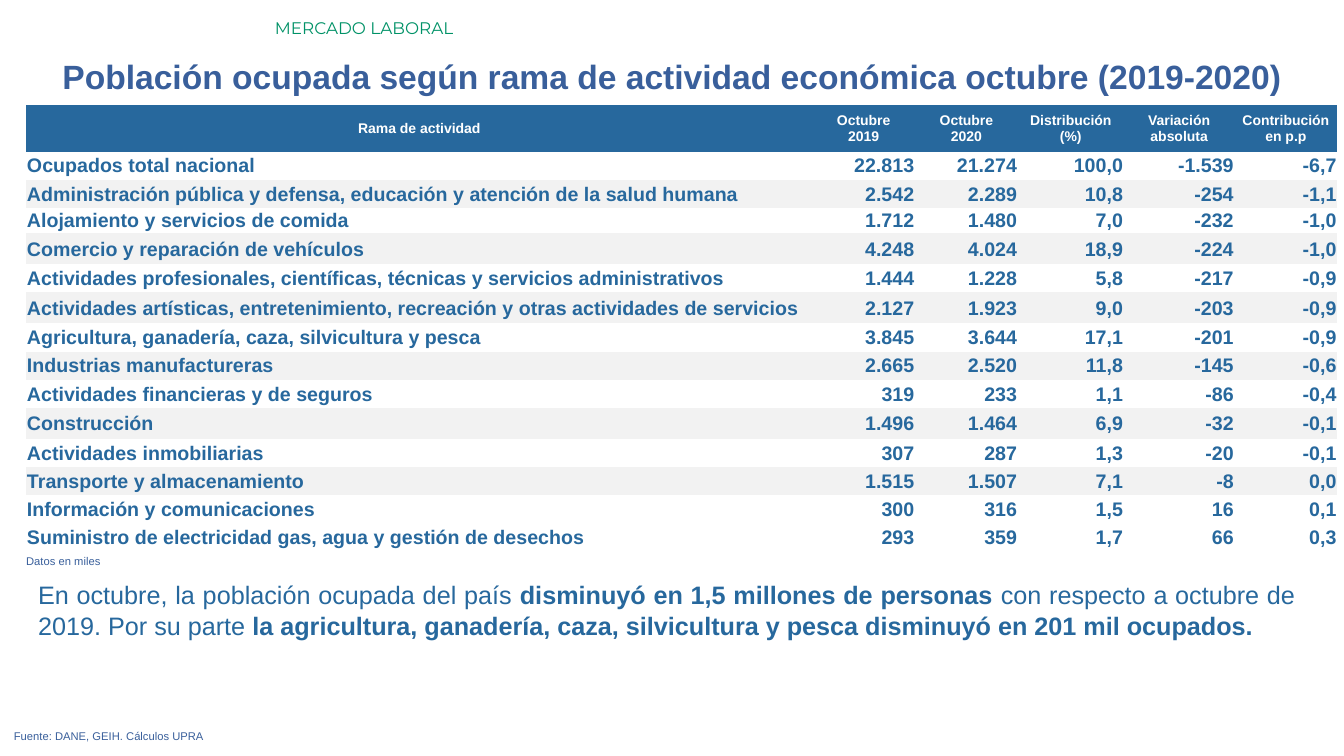
from dataclasses import dataclass

from pptx import Presentation
from pptx.dml.color import RGBColor
from pptx.enum import text as txt
from pptx.util import Cm, Pt

ALIGN = txt.PP_ALIGN
NO_GRID_STYLE = "{2D5ABB26-0587-4C30-8999-92F81FD0307C}"


@dataclass(frozen=True)
class Theme:
    green: str = "009267"
    title_blue: str = "395F9B"
    blue: str = "27689D"
    white: str = "FFFFFF"
    band: str = "F2F2F2"
    body_font: str = "Arial"
    section_font: str = "Montserrat"
    title_size: int = 24
    summary_size: int = 18
    row_size: int = 14
    section_size: int = 12
    header_size: int = 10
    note_size: int = 8


@dataclass(frozen=True)
class Box:
    """Position and size in centimetres."""
    left: float
    top: float
    width: float
    height: float


@dataclass(frozen=True)
class Column:
    heading: str
    width: float


@dataclass(frozen=True)
class Branch:
    name: str
    figures: str
    height: float = 0.71


THEME = Theme()
HEADER_HEIGHT = 1.18
COLUMNS = (
    Column("Rama de actividad", 19.81),
    Column("Octubre\n2019", 2.59),
    Column("Octubre\n2020", 2.59),
    Column("Distribución\n(%)", 2.67),
    Column("Variación\nabsoluta", 2.79),
    Column("Contribución\nen p.p", 2.59),
)
BRANCHES = (
    Branch("Ocupados total nacional", "22.813 21.274 100,0 -1.539 -6,7"),
    Branch("Administración pública y defensa, educación y atención de la salud humana",
           "2.542 2.289 10,8 -254 -1,1"),
    Branch("Alojamiento y servicios de comida", "1.712 1.480 7,0 -232 -1,0", 0.64),
    Branch("Comercio y reparación de vehículos", "4.248 4.024 18,9 -224 -1,0", 0.78),
    Branch("Actividades profesionales, científicas, técnicas y servicios administrativos",
           "1.444 1.228 5,8 -217 -0,9"),
    Branch("Actividades artísticas, entretenimiento, recreación y otras actividades de servicios",
           "2.127 1.923 9,0 -203 -0,9", 0.78),
    Branch("Agricultura, ganadería, caza, silvicultura y pesca", "3.845 3.644 17,1 -201 -0,9"),
    Branch("Industrias manufactureras", "2.665 2.520 11,8 -145 -0,6"),
    Branch("Actividades financieras y de seguros", "319 233 1,1 -86 -0,4"),
    Branch("Construcción", "1.496 1.464 6,9 -32 -0,1", 0.78),
    Branch("Actividades inmobiliarias", "307 287 1,3 -20 -0,1"),
    Branch("Transporte y almacenamiento", "1.515 1.507 7,1 -8 0,0"),
    Branch("Información y comunicaciones", "300 316 1,5 16 0,1"),
    Branch("Suministro de electricidad gas, agua y gestión de desechos", "293 359 1,7 66 0,3"),
)
SUMMARY = (
    "En octubre, la población ocupada del país **disminuyó en 1,5 millones de personas **"
    "con respecto a octubre de 2019. Por su parte **la agricultura, ganadería, caza, "
    "silvicultura y pesca disminuyó en 201 mil ocupados.**"
)


def write(frame, text: str, *, size: int, color: str, font: str = THEME.body_font,
          bold: bool = False, align: ALIGN = ALIGN.LEFT) -> None:
    """Fill a frame: a newline starts a paragraph, double asterisks switch bold."""
    for number, line in enumerate(text.split("\n")):
        paragraph = frame.add_paragraph() if number else frame.paragraphs[0]
        paragraph.alignment = align
        for position, part in enumerate(line.split("**")):
            if not part:
                continue
            run = paragraph.add_run()
            run.text = part
            run.font.name = font
            run.font.size = Pt(size)
            run.font.bold = bold != (position % 2 == 1)
            run.font.color.rgb = RGBColor.from_string(color)


def add_text(slide, box: Box, text: str, **text_format) -> None:
    area = slide.shapes.add_textbox(Cm(box.left), Cm(box.top), Cm(box.width), Cm(box.height))
    area.text_frame.word_wrap = True
    area.text_frame.auto_size = txt.MSO_AUTO_SIZE.SHAPE_TO_FIT_TEXT
    write(area.text_frame, text, **text_format)


def set_title(slide, box: Box, text: str) -> None:
    title = slide.shapes.title
    title.left, title.top = Cm(box.left), Cm(box.top)
    title.width, title.height = Cm(box.width), Cm(box.height)
    title.text_frame.word_wrap = True
    title.text_frame.auto_size = txt.MSO_AUTO_SIZE.SHAPE_TO_FIT_TEXT
    title.text_frame.vertical_anchor = txt.MSO_ANCHOR.TOP
    write(title.text_frame, text, size=THEME.title_size, color=THEME.title_blue,
          bold=True, align=ALIGN.CENTER)


def fill_cell(cell, text: str, fill: str | None, **text_format) -> None:
    cell.margin_left = cell.margin_right = cell.margin_top = Cm(0.02)
    cell.margin_bottom = 0
    cell.vertical_anchor = txt.MSO_ANCHOR.MIDDLE
    if fill:
        cell.fill.solid()
        cell.fill.fore_color.rgb = RGBColor.from_string(fill)
    else:
        cell.fill.background()
    write(cell.text_frame, text, bold=True, **text_format)


def add_branch_table(slide, left: float, top: float) -> None:
    heights = [HEADER_HEIGHT] + [branch.height for branch in BRANCHES]
    width = sum(column.width for column in COLUMNS)
    frame = slide.shapes.add_table(len(heights), len(COLUMNS), Cm(left), Cm(top),
                                   Cm(width), Cm(sum(heights)))
    table = frame.table
    table.first_row = table.horz_banding = False
    table._tbl.tblPr[0].text = NO_GRID_STYLE

    for row, height in zip(table.rows, heights):
        row.height = Cm(height)
    for index, column in enumerate(COLUMNS):
        table.columns[index].width = Cm(column.width)
        fill_cell(table.cell(0, index), column.heading, THEME.blue,
                  size=THEME.header_size, color=THEME.white, align=ALIGN.CENTER)

    for row_number, branch in enumerate(BRANCHES, start=1):
        banded = row_number % 2 == 0 and row_number < len(BRANCHES)
        for index, value in enumerate([branch.name, *branch.figures.split()]):
            fill_cell(table.cell(row_number, index), value, THEME.band if banded else None,
                      size=THEME.row_size, color=THEME.blue,
                      align=ALIGN.RIGHT if index else ALIGN.LEFT)


def main() -> None:
    deck = Presentation()
    deck.slide_width, deck.slide_height = Cm(33.87), Cm(19.05)
    slide = deck.slides.add_slide(deck.slide_layouts.get_by_name("Title Only"))

    add_text(slide, Box(6.68, 0.33, 27.18, 0.77), "MERCADO LABORAL",
             size=THEME.section_size, color=THEME.green, font=THEME.section_font)
    set_title(slide, Box(0, 1.27, 33.87, 1.28),
              "Población ocupada según rama de actividad económica octubre (2019-2020)")
    add_text(slide, Box(0.71, 14.48, 32.18, 1.8), SUMMARY,
             size=THEME.summary_size, color=THEME.blue, align=ALIGN.JUSTIFY)
    add_branch_table(slide, left=0.66, top=2.64)
    for left, top, note in ((0.41, 13.84, "Datos en miles"),
                            (0.1, 18.26, "Fuente: DANE, GEIH. Cálculos UPRA")):
        add_text(slide, Box(left, top, 32.79, 0.6), note,
                 size=THEME.note_size, color=THEME.title_blue, align=ALIGN.JUSTIFY)

    deck.save("out.pptx")


if __name__ == "__main__":
    main()
